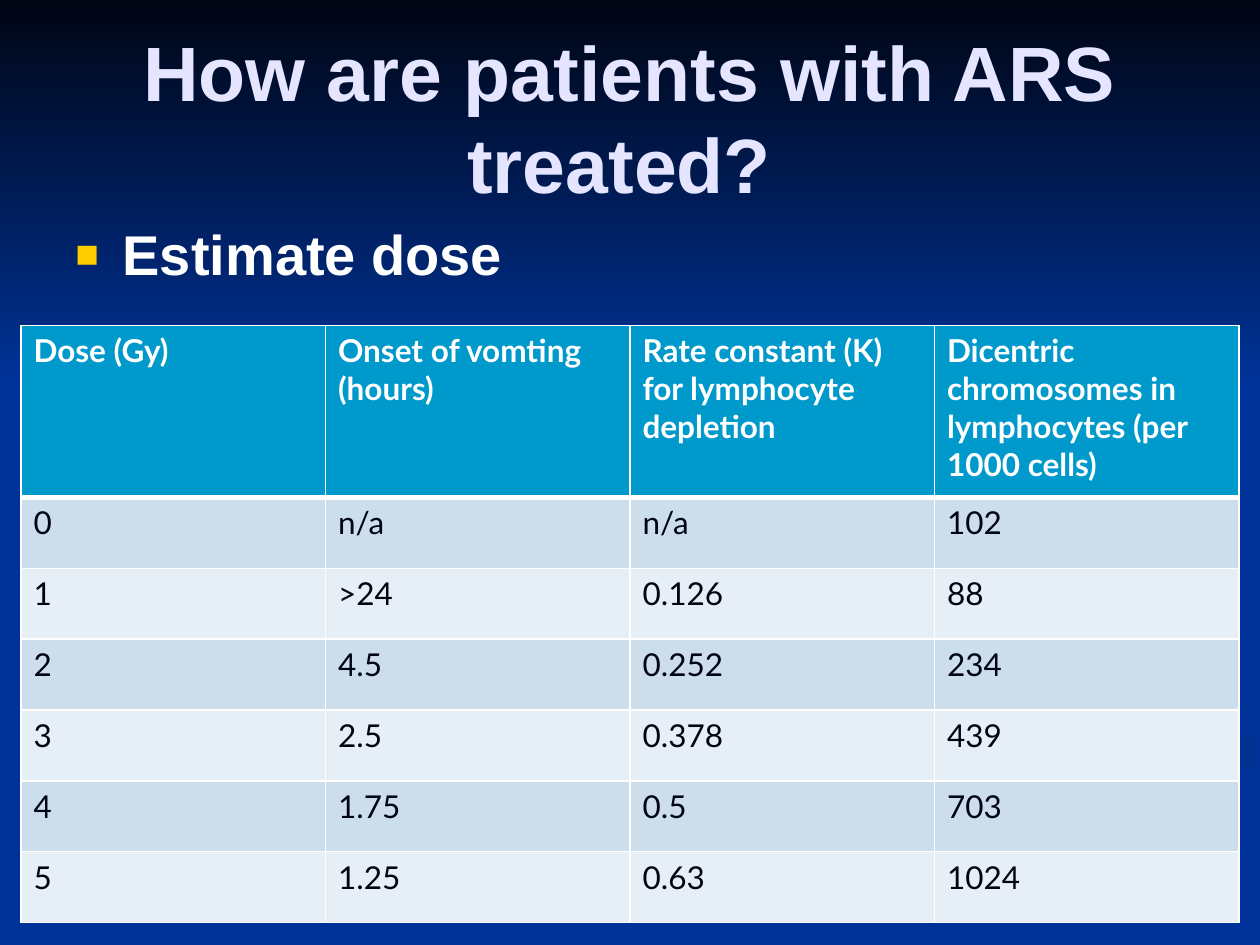
from typing import NamedTuple

from lxml.etree import SubElement
from pptx import Presentation
from pptx.dml.color import RGBColor
from pptx.enum.text import MSO_ANCHOR, PP_ALIGN
from pptx.oxml.ns import qn
from pptx.util import Emu, Pt

PX = 9525  # 96 px to the inch
WIDTH, HEIGHT = 960, 720

NAVY, BLUE, DEEP = "000514", "003399", "003193"
WHITE, LAVENDER, GOLD = "FFFFFF", "E5E5FF", "FFCC00"
HEADER_FILL, BAND_FILLS = "0099CC", ("CCDEEC", "E7EFF6")


class Box(NamedTuple):
    left: int
    top: int
    width: int
    height: int


class Backdrop(NamedTuple):
    """An outline shaded from its top colour to its bottom colour."""
    top_color: str
    bottom_color: str
    points: list[tuple[int, int]]


class Style(NamedTuple):
    font: str
    size: int
    color: str
    bold: bool = False


TITLE = Style("Arial", 44, LAVENDER, True)
BULLET = Style("Arial", 32, WHITE, True)
HEADER = Style("Lato", 18, WHITE, True)
BODY = Style("Lato", 18, NAVY)

SKY = Backdrop(NAVY, BLUE, [(0, 0), (WIDTH, 0), (WIDTH, 296), (0, 296)])
RIBBON = Backdrop(DEEP, BLUE, [
    (483, 719), (548, 719), (643, 674), (788, 625), (958, 585),
    (958, 558), (867, 586), (734, 621), (605, 665)])

TABLE_BOX = Box(16, 248, 928, 455)
HEADER_HEIGHT, ROW_HEIGHT = 131, 54
ROWS = [
    ("Dose (Gy)", "Onset of vomting (hours)",
     "Rate constant (K) for lymphocyte depletion",
     "Dicentric chromosomes in lymphocytes (per 1000 cells)"),
    ("0", "n/a", "n/a", "102"),
    ("1", ">24", "0.126", "88"),
    ("2", "4.5", "0.252", "234"),
    ("3", "2.5", "0.378", "439"),
    ("4", "1.75", "0.5", "703"),
    ("5", "1.25", "0.63", "1024"),
]


def rgb(color: str) -> RGBColor:
    return RGBColor.from_string(color)


def emu(box: Box) -> list[Emu]:
    return [Emu(v * PX) for v in box]


def style_text(tf, style: Style) -> None:
    for p in tf.paragraphs:
        for r in p.runs:
            r.font.name, r.font.size = style.font, Pt(style.size)
            r.font.bold, r.font.color.rgb = style.bold, rgb(style.color)


def add_backdrop(s, backdrop: Backdrop) -> None:
    builder = s.shapes.build_freeform(*backdrop.points[0], scale=PX)
    builder.add_line_segments(backdrop.points[1:], close=True)
    sp = builder.convert_to_shape()
    sp.shadow.inherit = False
    sp.line.fill.background()
    sp.fill.gradient()
    sp.fill.gradient_angle = 270
    colors = (backdrop.top_color, backdrop.bottom_color)
    for stop, color in zip(sp.fill.gradient_stops, colors):
        stop.color.rgb = rgb(color)


def add_text(s, box: Box, text: str, style: Style):
    tf = s.shapes.add_textbox(*emu(box)).text_frame
    tf.word_wrap = True
    tf.text = text
    style_text(tf, style)
    return tf


def add_bullet(p, char: str, color: str, percent: int, indent: int) -> None:
    pPr = p._p.get_or_add_pPr()
    pPr.set("marL", str(indent * PX))
    pPr.set("indent", str(-indent * PX))
    SubElement(SubElement(pPr, qn("a:buClr")), qn("a:srgbClr"), val=color)
    SubElement(pPr, qn("a:buSzPct"), val=str(percent * 1000))
    SubElement(pPr, qn("a:buFont"), typeface="Arial")
    SubElement(pPr, qn("a:buChar"), char=char)


def fill_cell(cell, text: str, style: Style, fill: str, widths: dict[str, int]) -> None:
    """Set text, fill and white borders; widths maps each side to points."""
    cell.text = text
    style_text(cell.text_frame, style)
    tcPr = cell._tc.get_or_add_tcPr()
    for side, width in widths.items():
        ln = SubElement(tcPr, qn(f"a:ln{side}"), w=str(Pt(width)))
        SubElement(SubElement(ln, qn("a:solidFill")), qn("a:srgbClr"), val=WHITE)
    cell.fill.solid()
    cell.fill.fore_color.rgb = rgb(fill)


def add_dose_table(s) -> None:
    table = s.shapes.add_table(len(ROWS), len(ROWS[0]), *emu(TABLE_BOX)).table
    for i, values in enumerate(ROWS):
        is_header = i == 0
        table.rows[i].height = Emu((HEADER_HEIGHT if is_header else ROW_HEIGHT) * PX)
        style = HEADER if is_header else BODY
        fill = HEADER_FILL if is_header else BAND_FILLS[(i - 1) % 2]
        widths = {"L": 1, "R": 1, "T": 3 if i == 1 else 1, "B": 3 if is_header else 1}
        for j, value in enumerate(values):
            fill_cell(table.cell(i, j), value, style, fill, widths)


def main() -> None:
    prs = Presentation()
    prs.slide_width, prs.slide_height = Emu(WIDTH * PX), Emu(HEIGHT * PX)
    s = prs.slides.add_slide(prs.slide_layouts[6])
    s.background.fill.solid()
    s.background.fill.fore_color.rgb = rgb(BLUE)
    for backdrop in (SKY, RIBBON):
        add_backdrop(s, backdrop)

    tf = add_text(s, Box(48, 29, 864, 120), "How are patients with ARS treated? ", TITLE)
    tf.vertical_anchor = MSO_ANCHOR.MIDDLE
    tf.paragraphs[0].alignment = PP_ALIGN.CENTER

    tf = add_text(s, Box(48, 168, 864, 112), "Estimate dose", BULLET)
    p = tf.paragraphs[0]
    p.line_spacing, p.space_before = 0.9, Pt(6.4)
    add_bullet(p, "■", GOLD, percent=70, indent=36)

    add_dose_table(s)
    prs.save("out.pptx")


if __name__ == "__main__":
    main()
